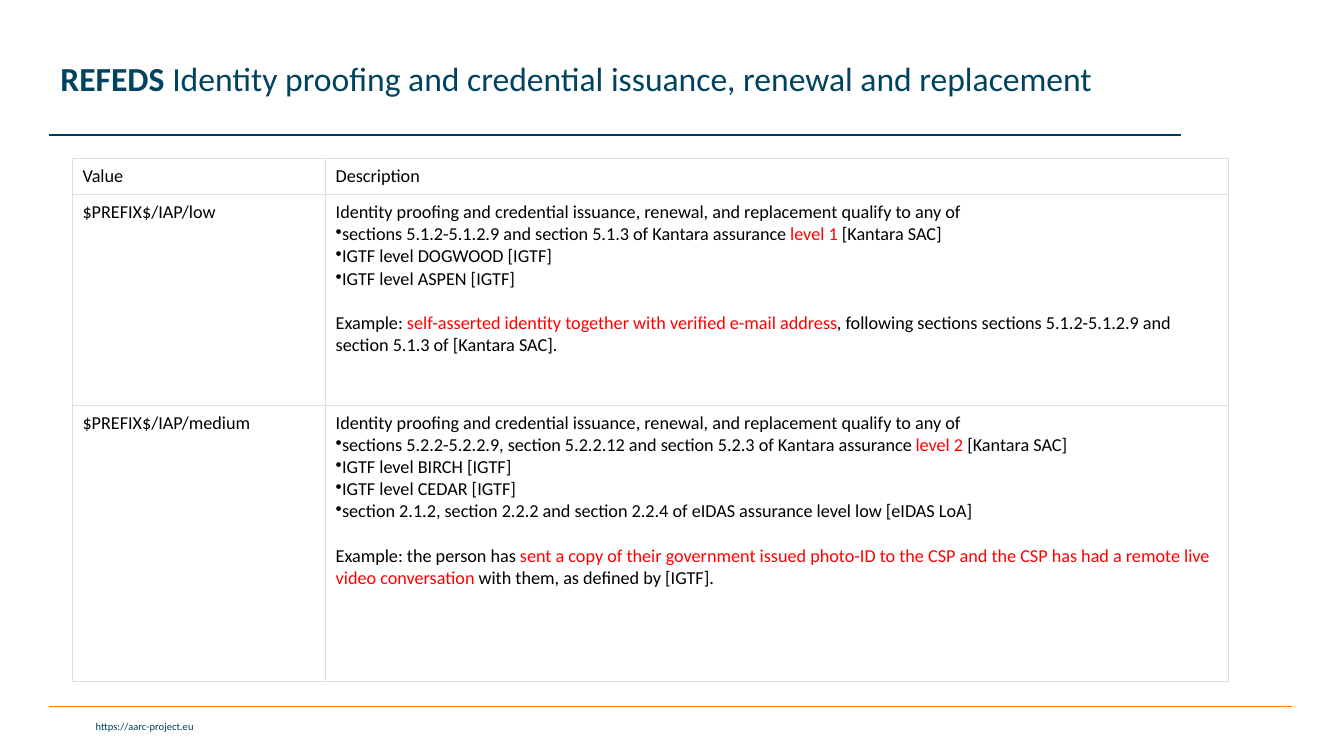
from lxml.etree import SubElement
from pptx import Presentation
from pptx.dml.color import RGBColor
from pptx.enum.shapes import MSO_CONNECTOR
from pptx.enum.text import MSO_ANCHOR, PP_ALIGN
from pptx.oxml import parse_xml
from pptx.oxml.ns import nsdecls, qn
from pptx.util import Cm, Pt

BLACK, WHITE, RED = "000000", "FFFFFF", "FF0000"
NAVY, DARK_BLUE, TITLE_BLUE = "003959", "003F5E", "004361"
ORANGE, GREY = "F57B20", "DDDDDD"

INTRO = ("Identity proofing and credential issuance, renewal, and replacement "
         "qualify to any of")

LOW = [
    [INTRO],
    ["•", "sections 5.1.2-5.1.2.9 and section 5.1.3 of Kantara assurance ",
     ("level 1 ", RED), "[Kantara SAC]"],
    ["•", "IGTF level DOGWOOD [IGTF]"],
    ["•", "IGTF level ASPEN [IGTF]"],
    ["Example: ",
     ("self-asserted identity together with verified e-mail address", RED),
     ", following sections sections 5.1.2-5.1.2.9 and section 5.1.3 of [Kantara SAC]."],
]

MEDIUM = [
    [INTRO],
    ["•", "sections 5.2.2-5.2.2.9, section 5.2.2.12 and section 5.2.3 of Kantara assurance ",
     ("level 2", RED), " [Kantara SAC]"],
    ["•", "IGTF level BIRCH [IGTF]"],
    ["•", "IGTF level CEDAR [IGTF]"],
    ["•", "section 2.1.2, section 2.2.2 and section 2.2.4 of eIDAS assurance level low [eIDAS LoA]"],
    ["Example: the person has ",
     ("sent a copy of their government issued photo-ID to the CSP and the CSP "
      "has had a remote live video conversation ", RED),
     "with them, as defined by [IGTF]."],
]

ROWS = [
    [[["Value"]], [["Description"]]],
    [[["$PREFIX$/IAP/low"]], LOW],
    [[["$PREFIX$/IAP/medium"]], MEDIUM],
]


def rgb(color):
    return RGBColor.from_string(color)


def add_run(p, text, size=13, color=BLACK, bold=False, font="Calibri"):
    r = p.add_run()
    r.text = text
    r.font.name = font
    r.font.size = Pt(size)
    r.font.bold = bold
    r.font.color.rgb = rgb(color)


class Deck:
    def __init__(self):
        self.prs = Presentation()
        self.prs.slide_width, self.prs.slide_height = Cm(33.87), Cm(19.05)
        self.s = self.prs.slides.add_slide(self.prs.slide_layouts[5])

    def title(self, box, strong, rest):
        sp = self.s.shapes.title
        sp.left, sp.top, sp.width, sp.height = map(Cm, box)
        tf = sp.text_frame
        tf.word_wrap = True
        tf.vertical_anchor = MSO_ANCHOR.MIDDLE
        p = tf.paragraphs[0]
        p.alignment = PP_ALIGN.LEFT
        p.line_spacing = 0.9
        add_run(p, strong, size=24, color=TITLE_BLUE, bold=True)
        add_run(p, rest, size=24, color=TITLE_BLUE)

    def rule(self, left, right, y, color):
        sp = self.s.shapes.add_connector(
            MSO_CONNECTOR.STRAIGHT, Cm(left), Cm(y), Cm(right), Cm(y))
        sp.line.color.rgb = rgb(color)
        sp.line.width = Pt(1)
        SubElement(sp._element.spPr, qn("a:effectLst"))

    def footer(self, box, text):
        tf = self.s.shapes.add_textbox(*map(Cm, box)).text_frame
        tf.word_wrap = True
        p = tf.paragraphs[0]
        p.alignment = PP_ALIGN.RIGHT
        add_run(p, text, size=7.5, color=DARK_BLUE)

    def table(self, left, top, widths, heights, rows):
        table = self.s.shapes.add_table(
            len(heights), len(widths), Cm(left), Cm(top),
            Cm(sum(widths)), Cm(sum(heights))).table
        table.first_row = table.horz_banding = False
        for col, width in zip(table.columns, widths):
            col.width = Cm(width)
        for row, height, contents in zip(table.rows, heights, rows):
            row.height = Cm(height)
            for cell, paragraphs in zip(row.cells, contents):
                self.cell(cell, paragraphs)

    def cell(self, cell, paragraphs):
        cell.margin_left = cell.margin_right = Cm(0.25)
        cell.margin_top = cell.margin_bottom = Cm(0.17)
        cell.fill.solid()
        cell.fill.fore_color.rgb = rgb(WHITE)
        for i, side in enumerate("LRTB"):
            cell._tc.tcPr.insert(i, parse_xml(
                f'<a:ln{side} {nsdecls("a")} w="{Pt(0.75)}"><a:solidFill>'
                f'<a:srgbClr val="{GREY}"/></a:solidFill></a:ln{side}>'))
        tf = cell.text_frame
        for i, parts in enumerate(paragraphs):
            p = tf.add_paragraph() if i else tf.paragraphs[0]
            if parts[0] == "•":
                pPr = p._p.get_or_add_pPr()
                pPr.set("marL", "0")
                pPr.set("indent", "0")
                SubElement(pPr, qn("a:buChar"), char="•")
                parts = parts[1:]
            elif i:
                p.space_before = Pt(15.9)
            for part in parts:
                text, color = (part, BLACK) if isinstance(part, str) else part
                add_run(p, text, color=color)


def main():
    deck = Deck()
    deck.rule(1.24, 32.56, 17.81, ORANGE)
    deck.footer((0.08, 18.01, 5.05, 0.58), "https://aarc-project.eu")
    deck.rule(1.24, 29.77, 3.4, NAVY)
    deck.table(1.83, 3.99, (6.38, 22.76), (0.91, 5.31, 6.96), ROWS)
    deck.title((1.27, 0.2, 26.7, 3.68), "REFEDS ",
               "Identity proofing and credential issuance, renewal and replacement")
    deck.prs.save("out.pptx")


if __name__ == "__main__":
    main()
